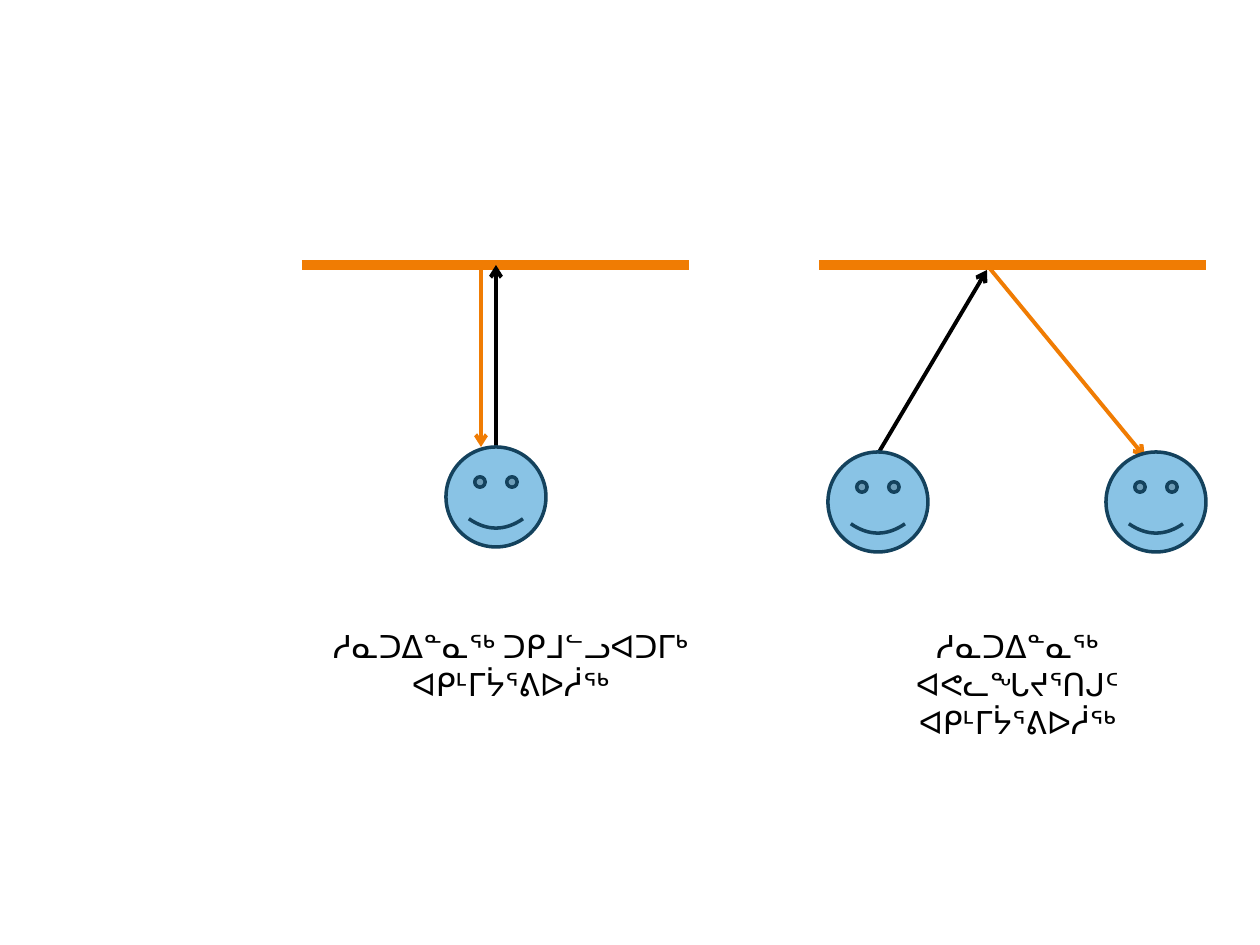
from lxml import etree
from pptx import Presentation
from pptx.dml.color import RGBColor
from pptx.enum import shapes, text
from pptx.oxml.ns import qn
from pptx.util import Inches, Pt

HUES = {"wall": "F07C03", "ray": "000000", "skin": "89C3E5", "edge": "14425D"}


def px(*nums):
    return [Inches(n / 126) for n in nums]


def line(ends, hue, width, arrow=True):
    link = slide.shapes.add_connector(shapes.MSO_CONNECTOR.STRAIGHT, *px(*ends))
    link.line.color.rgb = RGBColor.from_string(HUES[hue])
    link.line.width = Pt(width)
    if arrow:
        etree.SubElement(link.line._get_or_add_ln(), qn("a:tailEnd"), type="arrow")
    etree.SubElement(link._element.spPr, qn("a:effectLst"))


deck = Presentation()
deck.slide_width, deck.slide_height = px(1260, 945)
slide = deck.slides.add_slide(deck.slide_layouts[6])

for left in (302, 819):
    line((left, 265, left + 387, 265), "wall", 6, arrow=False)

rays = [
    ((496, 447, 496, 265), "ray"),
    ((481, 265, 481, 447), "wall"),
    ((879, 452, 987, 270), "ray"),
    ((987, 265, 1145, 457), "wall"),
]
for ends, hue in rays:
    line(ends, hue, 2.25)

for left, top in ((446, 447), (828, 452), (1106, 452)):
    face = slide.shapes.add_shape(
        shapes.MSO_SHAPE.SMILEY_FACE, *px(left, top, 100, 100))
    face.shadow.inherit = False
    face.fill.solid()
    face.fill.fore_color.rgb = RGBColor.from_string(HUES["skin"])
    face.line.color.rgb = RGBColor.from_string(HUES["edge"])
    face.line.width = Pt(2)

labels = [
    (312, "ᓱᓇᑐᐃᓐᓇᖅ ᑐᑭᒧᓪᓗᐊᑐᒥᒃ ᐊᑭᒻᒥᔮᕐᕕᐅᓲᖅ"),
    (819, "ᓱᓇᑐᐃᓐᓇᖅ ᐊᕙᓚᖓᔪᕐᑎᒍᑦ ᐊᑭᒻᒥᔮᕐᕕᐅᓲᖅ"),
]
for left, words in labels:
    box = slide.shapes.add_textbox(*px(left, 621, 397, 89))
    frame = box.text_frame
    frame.word_wrap = True
    frame.auto_size = text.MSO_AUTO_SIZE.SHAPE_TO_FIT_TEXT
    para = frame.paragraphs[0]
    para.alignment = text.PP_ALIGN.CENTER
    run = para.add_run()
    run.text = words
    run.font.name = "Roboto"
    run.font.size = Pt(18)
    run.font.color.rgb = RGBColor.from_string(HUES["ray"])

deck.save("out.pptx")
